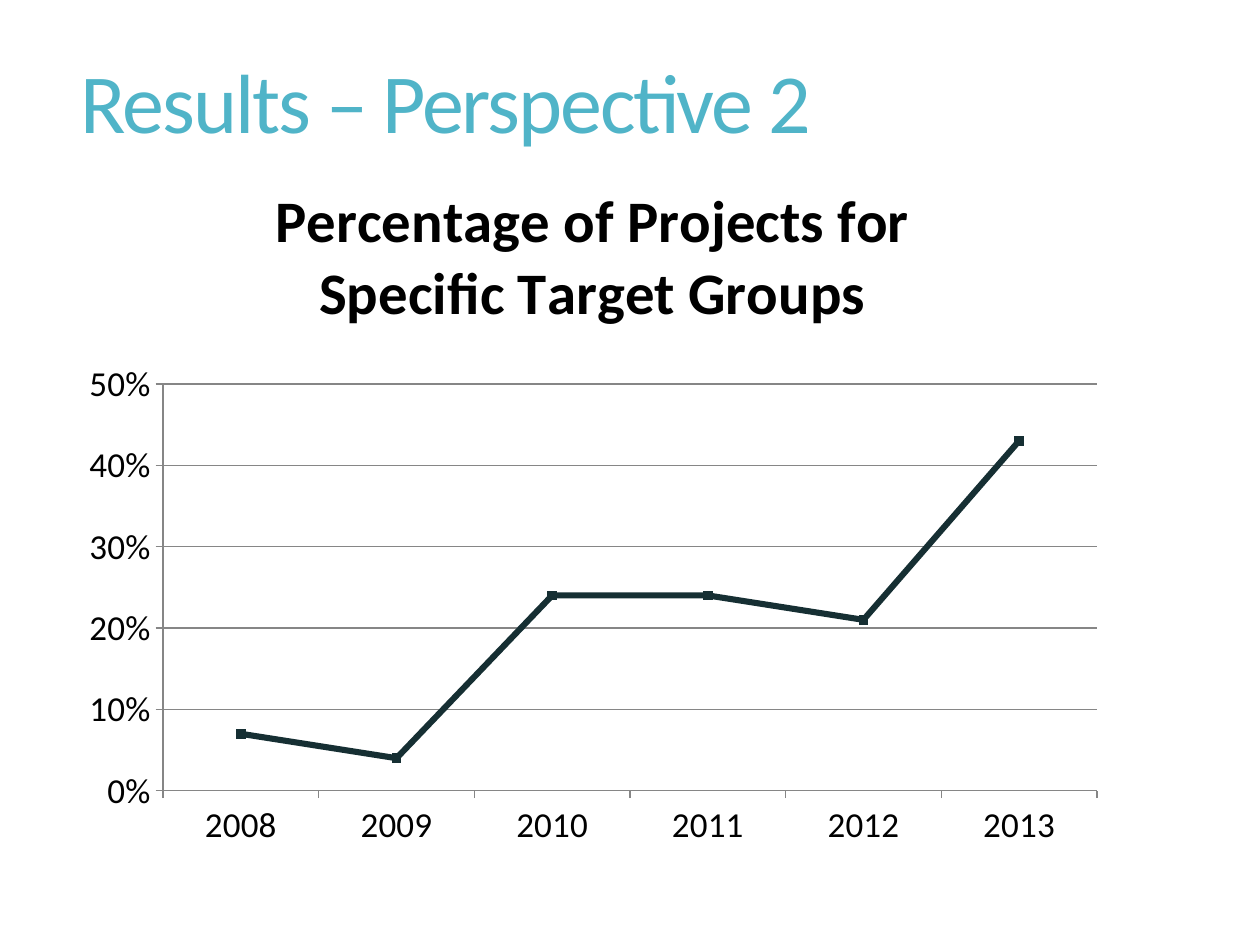
from typing import NamedTuple

from lxml import etree
from pptx import Presentation
from pptx.chart.data import CategoryChartData
from pptx.dml.color import RGBColor
from pptx.enum.chart import XL_CHART_TYPE, XL_MARKER_STYLE, XL_TICK_MARK
from pptx.enum.text import MSO_ANCHOR, PP_ALIGN
from pptx.oxml import parse_xml
from pptx.oxml.ns import nsdecls
from pptx.util import Emu, Pt

LINE_MARKERS = XL_CHART_TYPE.LINE_MARKERS
SQUARE = XL_MARKER_STYLE.SQUARE
TICK_OUTSIDE = XL_TICK_MARK.OUTSIDE
TICK_NONE = XL_TICK_MARK.NONE
MIDDLE = MSO_ANCHOR.MIDDLE
LEFT = PP_ALIGN.LEFT
CENTER = PP_ALIGN.CENTER

EMU_PER_PX = 914400 / 126
FONT = "Calibri"
TITLE_ONLY = 5
COLORS = {
    "title": "50B4C8",
    "text": "000000",
    "series": "162F33",
    "axis": "868686",
    "background": "FFFFFF",
}


class Box(NamedTuple):
    left: int
    top: int
    width: int
    height: int


TITLE_BOX = Box(68, -8, 1114, 228)
CHART_BOX = Box(68, 147, 1050, 714)
PLOT_BOX = Box(163, 384, 934, 407)
PROJECT_SHARES = {
    "2008": 0.07,
    "2009": 0.04,
    "2010": 0.24,
    "2011": 0.24,
    "2012": 0.21,
    "2013": 0.43,
}


def px(value: int) -> Emu:
    return Emu(round(value * EMU_PER_PX))


def color(name: str) -> RGBColor:
    return RGBColor.from_string(COLORS[name])


def format_font(font, size: float, color_name: str, bold: bool = False) -> None:
    font.name = FONT
    font.size = Pt(size)
    font.bold = bold
    font.color.rgb = color(color_name)


def write_text(text_frame, text: str, *, size: float, color_name: str,
               bold: bool = False, alignment=LEFT, line_spacing: float = 1.0,
               tracking: int = 0) -> None:
    paragraph = text_frame.paragraphs[0]
    paragraph.alignment = alignment
    paragraph.line_spacing = line_spacing
    run = paragraph.add_run()
    run.text = text
    format_font(run.font, size, color_name, bold)
    if tracking:
        run.font._element.set("spc", str(tracking))


def add_title(slide) -> None:
    title = slide.shapes.title
    title.left, title.top, title.width, title.height = map(px, TITLE_BOX)
    title.text_frame.word_wrap = True
    title.text_frame.vertical_anchor = MIDDLE
    write_text(title.text_frame, "Results – Perspective 2", size=48,
               color_name="title", line_spacing=0.9, tracking=-120)


def format_axis(axis) -> None:
    axis.major_tick_mark = TICK_OUTSIDE
    axis.minor_tick_mark = TICK_NONE
    axis.format.line.color.rgb = color("axis")
    axis.format.line.width = Pt(0.75)
    format_font(axis.tick_labels.font, 20, "text")


def place_plot(chart) -> None:
    fractions = {
        "x": (PLOT_BOX.left - CHART_BOX.left) / CHART_BOX.width,
        "y": (PLOT_BOX.top - CHART_BOX.top) / CHART_BOX.height,
        "w": PLOT_BOX.width / CHART_BOX.width,
        "h": PLOT_BOX.height / CHART_BOX.height,
    }
    layout = parse_xml(
        f'<c:layout {nsdecls("c")}><c:manualLayout><c:layoutTarget val="inner"/>'
        '<c:xMode val="edge"/><c:yMode val="edge"/></c:manualLayout></c:layout>'
    )
    for name, fraction in fractions.items():
        element = etree.SubElement(layout[0], layout.tag.replace("layout", name))
        element.set("val", f"{fraction:.4f}")
    plot_area = chart._chartSpace.chart.plotArea
    for existing in plot_area.findall(layout.tag):
        plot_area.remove(existing)
    plot_area.insert(0, layout)


def add_project_chart(slide) -> None:
    data = CategoryChartData(number_format="0%")
    data.categories = list(PROJECT_SHARES)
    data.add_series("Series 1", list(PROJECT_SHARES.values()))
    chart = slide.shapes.add_chart(LINE_MARKERS, *map(px, CHART_BOX), data).chart
    chart.has_legend = False
    format_font(chart.font, 28, "text")
    chart.has_title = True
    write_text(chart.chart_title.text_frame,
               "Percentage of Projects for Specific Target Groups",
               size=33.6, color_name="text", bold=True, alignment=CENTER)
    chart.chart_title.include_in_layout = False

    value_axis = chart.value_axis
    for axis in (chart.category_axis, value_axis):
        format_axis(axis)
    value_axis.minimum_scale = 0
    value_axis.maximum_scale = 0.5
    value_axis.major_unit = 0.1
    value_axis.has_major_gridlines = True
    value_axis.major_gridlines.format.line.color.rgb = color("axis")
    value_axis.major_gridlines.format.line.width = Pt(0.75)
    value_axis.tick_labels.number_format = "0%"
    value_axis.tick_labels.number_format_is_linked = False

    plot = chart.plots[0]
    plot.vary_by_categories = False
    series = plot.series[0]
    series.smooth = False
    series.format.line.color.rgb = color("series")
    series.format.line.width = Pt(3.5)
    series.marker.style = SQUARE
    series.marker.size = 5
    series.marker.format.fill.solid()
    series.marker.format.fill.fore_color.rgb = color("series")
    series.marker.format.line.color.rgb = color("series")
    place_plot(chart)


def main() -> None:
    presentation = Presentation()
    presentation.slide_width = px(1260)
    presentation.slide_height = px(945)
    slide = presentation.slides.add_slide(presentation.slide_layouts[TITLE_ONLY])
    slide.background.fill.solid()
    slide.background.fill.fore_color.rgb = color("background")
    add_title(slide)
    add_project_chart(slide)
    presentation.save("out.pptx")


if __name__ == "__main__":
    main()
